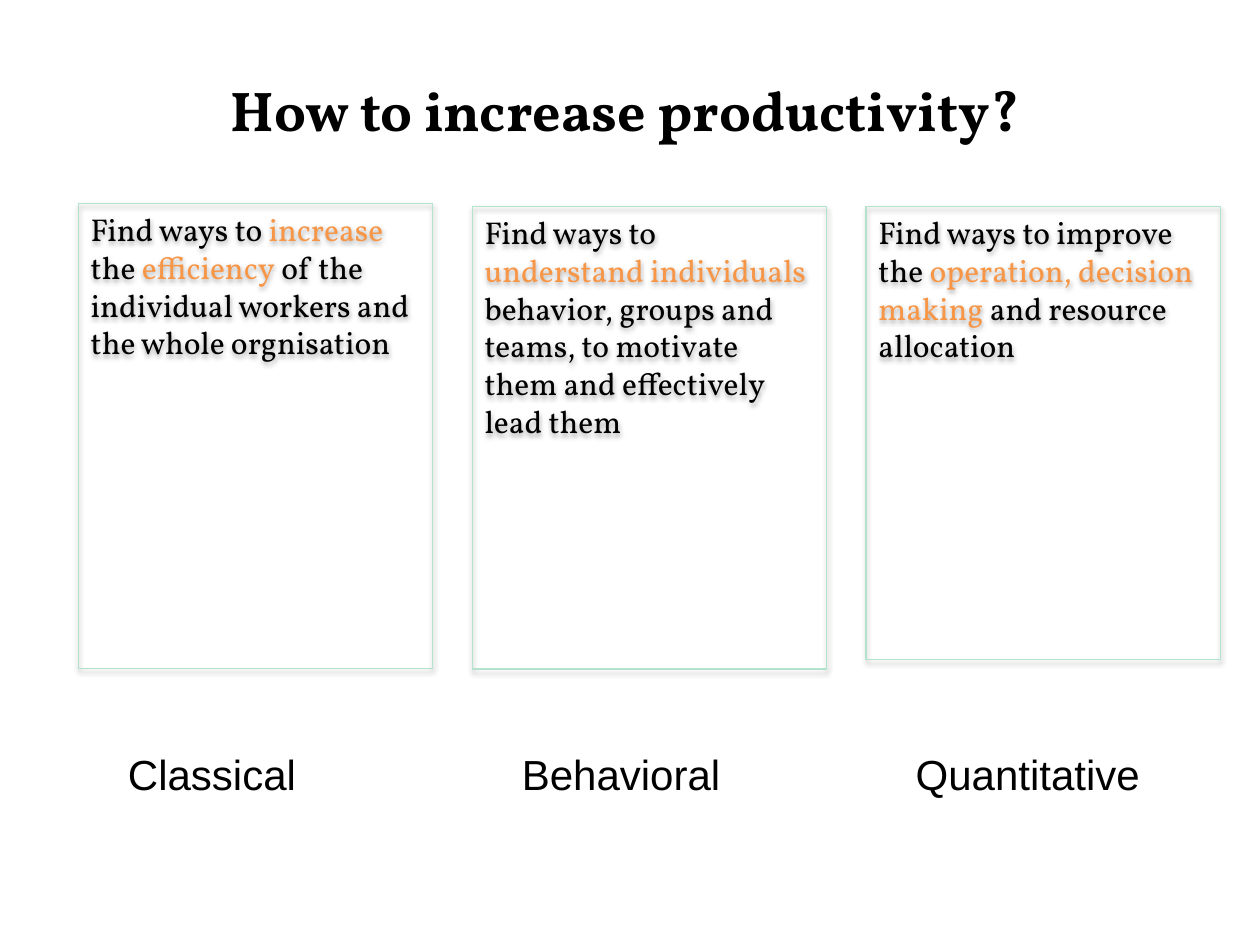
from dataclasses import dataclass

from lxml.etree import SubElement
from pptx import Presentation
from pptx.dml.color import RGBColor
from pptx.enum.shapes import MSO_SHAPE
from pptx.enum.text import MSO_ANCHOR, MSO_AUTO_SIZE, PP_ALIGN
from pptx.oxml.ns import qn
from pptx.shapes.autoshape import Shape
from pptx.slide import Slide
from pptx.util import Cm, Pt

BLACK = RGBColor(0x00, 0x00, 0x00)
ORANGE = RGBColor(0xF7, 0x96, 0x46)
MINT = RGBColor(0xB3, 0xE2, 0xCD)

FIRST_LEFT, COLUMN_STEP, BOX_WIDTH = 1.58, 7.94, 7.14
LABEL_INDENT, LABEL_TOP, LABEL_HEIGHT = 1.0, 15.09, 1.02


@dataclass
class Approach:
    name: str
    label_width: float
    top: float
    height: float
    pieces: tuple[str, ...]  # plain and highlighted text in turn


APPROACHES = [
    Approach("Classical", 3.71, 4.11, 9.37, (
        "Find ways to ", "increase ", "the ", "efficiency",
        " of the individual workers and the whole orgnisation")),
    Approach("Behavioral", 4.37, 4.17, 9.32, (
        "Find ways to ", "understand individuals ",
        "behavior, groups and teams, to motivate them and effectively lead them")),
    Approach("Quantitative", 4.93, 4.17, 9.12, (
        "Find ways to improve the ", "operation, decision making ",
        "and resource allocation")),
]


def add_soft_shadow(shape: Shape) -> None:
    shape.shadow.inherit = False
    effects = shape._element.spPr.find(qn("a:effectLst"))
    shadow = SubElement(effects, qn("a:outerShdw"), blurRad=str(Pt(3.1)),
                        dist=str(Pt(1.8)), dir="5400000", rotWithShape="0")
    color = SubElement(shadow, qn("a:srgbClr"), val=str(BLACK))
    SubElement(color, qn("a:alpha"), val="35000")


def add_title(page: Slide, text: str) -> None:
    title = page.shapes.title
    title.left, title.top = Cm(1.4), Cm(0.99)
    title.width, title.height = Cm(22.43), Cm(2.41)
    title.text_frame.text = text
    title.text_frame.vertical_anchor = MSO_ANCHOR.MIDDLE
    para = title.text_frame.paragraphs[0]
    para.alignment = PP_ALIGN.CENTER
    para.font.name, para.font.size, para.font.bold = "Vollkorn", Pt(32), True
    para.font.color.rgb = BLACK


def add_box(page: Slide, approach: Approach, left: float) -> None:
    box = page.shapes.add_shape(MSO_SHAPE.RECTANGLE, Cm(left), Cm(approach.top),
                                Cm(BOX_WIDTH), Cm(approach.height))
    box.fill.background()
    box.line.color.rgb = MINT
    box.line.width = Pt(0.75)
    add_soft_shadow(box)
    frame = box.text_frame
    frame.word_wrap = True
    frame.vertical_anchor = MSO_ANCHOR.TOP
    para = frame.paragraphs[0]
    para.alignment = PP_ALIGN.LEFT
    para.font.name, para.font.size = "Vollkorn", Pt(18)
    for index, piece in enumerate(approach.pieces):
        span = para.add_run()
        span.text = piece
        span.font.color.rgb = ORANGE if index % 2 else BLACK


def add_label(page: Slide, approach: Approach, left: float) -> None:
    label = page.shapes.add_textbox(Cm(left), Cm(LABEL_TOP),
                                    Cm(approach.label_width), Cm(LABEL_HEIGHT))
    frame = label.text_frame
    frame.margin_left = frame.margin_right = frame.margin_top = frame.margin_bottom = 0
    frame.word_wrap = False
    frame.auto_size = MSO_AUTO_SIZE.SHAPE_TO_FIT_TEXT
    frame.text = approach.name
    font = frame.paragraphs[0].font
    font.name, font.size = "Arial", Pt(24)
    font.color.rgb = BLACK


def main() -> None:
    deck = Presentation()
    deck.slide_width, deck.slide_height = Cm(25.4), Cm(19.05)
    page = deck.slides.add_slide(deck.slide_layouts[5])
    add_title(page, "How to increase productivity?")

    # One box and one label per column
    for column, approach in enumerate(APPROACHES):
        left = FIRST_LEFT + column * COLUMN_STEP
        add_box(page, approach, left)
        add_label(page, approach, left + LABEL_INDENT)

    deck.save("out.pptx")


if __name__ == "__main__":
    main()
